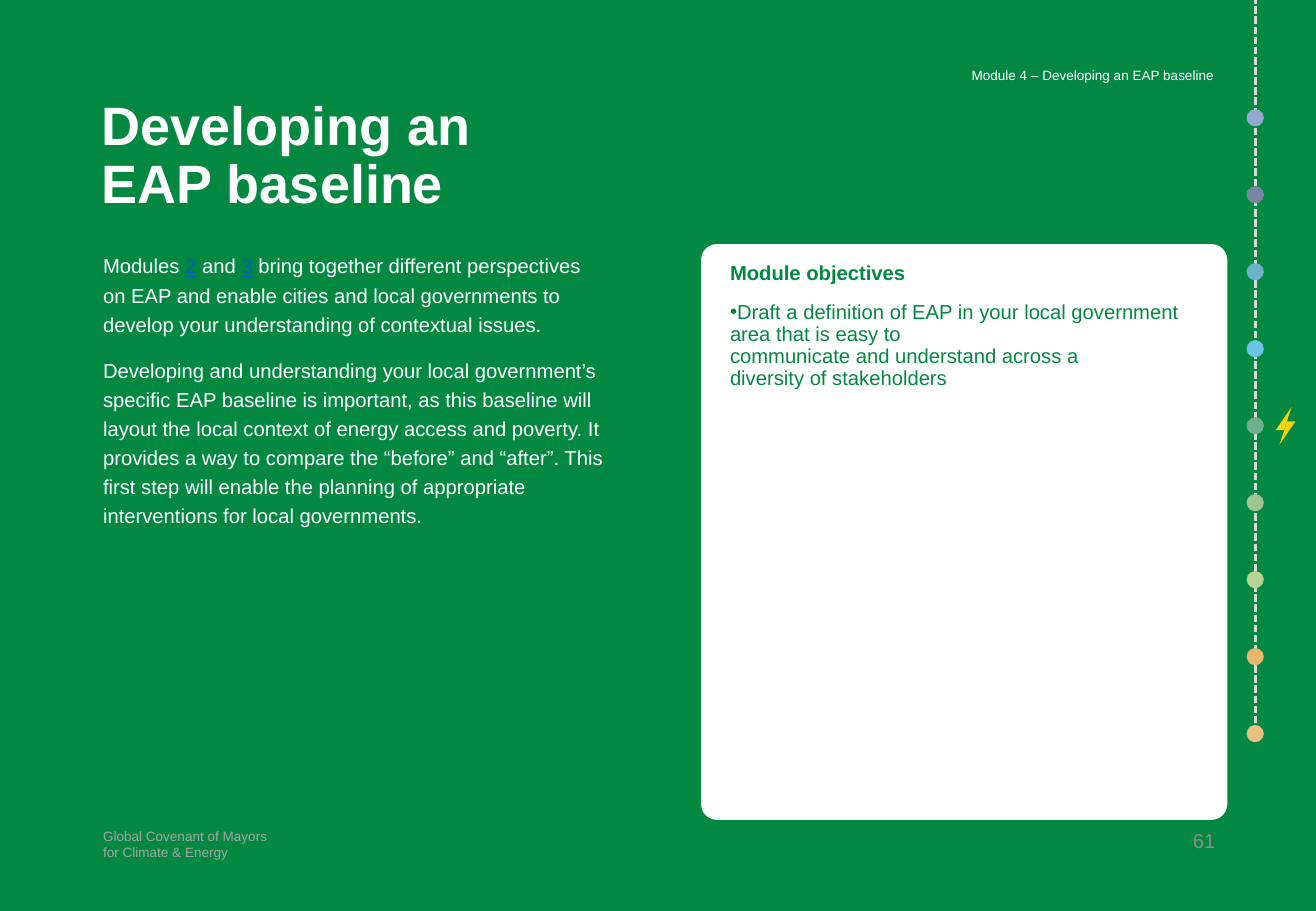
from dataclasses import dataclass
from lxml import etree
from pptx import Presentation, util as u
from pptx.dml import color
from pptx.enum import dml, shapes, text
from pptx.oxml import ns


@dataclass
class Theme:
    face: str = "Arial"
    green: str = "038842"
    white: str = "FFFFFF"
    link: str = "0563C1"
    foot: str = "A6A6A6"
    page: str = "8C8C8C"
    track: str = "D9D9D9"
    bolt: str = "FAD307"
    dots: tuple = ("4C78CE", "1C3567", "008CBE", "00B0F0", "038842",
                   "6AB24D", "92D050", "F19500", "F8A92A")
    small: int = 8
    body: int = 12
    title: int = 32


def rgb(hue):
    return color.RGBColor.from_string(hue)


def apply(item, **vals):
    for key, val in vals.items():
        setattr(item, key, val)


def child(node, tag, **vals):
    return etree.SubElement(node, ns.qn(tag), vals)


class Page:
    def __init__(self, theme, slide):
        self.theme, self.slide = theme, slide
        back = slide.background.fill
        back.solid()
        back.fore_color.rgb = rgb(theme.green)

    def paint(self, item, hue, alpha=None):
        item.shadow.inherit = False
        item.fill.solid()
        item.fill.fore_color.rgb = rgb(hue)
        item.line.fill.background()
        if alpha:
            node = item.element.spPr.find(".//" + ns.qn("a:srgbClr"))
            child(node, "a:alpha", val=str(alpha * 1000))
        return item

    def shape(self, kind, box, hue, alpha=None):
        item = self.slide.shapes.add_shape(kind, *map(u.Inches, box))
        return self.paint(item, hue, alpha)

    def poly(self, points, hue):
        pts = [(u.Inches(x), u.Inches(y)) for x, y in points]
        form = self.slide.shapes.build_freeform(*pts[0])
        form.add_line_segments(pts[1:], close=True)
        self.paint(form.convert_to_shape(), hue)

    def dash(self, start, end, hue, width):
        ends = map(u.Inches, start + end)
        item = self.slide.shapes.add_connector(shapes.MSO_CONNECTOR.STRAIGHT, *ends)
        apply(item.line, width=u.Pt(width), dash_style=dml.MSO_LINE.SQUARE_DOT)
        item.line.color.rgb = rgb(hue)
        child(item.element.spPr, "a:effectLst")

    def box(self, place):
        frame = self.slide.shapes.add_textbox(*map(u.Inches, place)).text_frame
        frame.word_wrap = True
        return frame

    def para(self, frame, runs, size, hue, bold=False, bullet=False, **form):
        first = not frame.paragraphs[0].runs
        par = frame.paragraphs[0] if first else frame.add_paragraph()
        apply(par, **{"alignment": text.PP_ALIGN.LEFT, **form})
        if not first:
            par.space_before = u.Pt(10)
        if bullet:
            props = par._p.get_or_add_pPr()
            indent = u.Inches(0.31)
            apply(props, marL=indent, indent=-indent)
            child(props, "a:buFont", typeface=self.theme.face)
            child(props, "a:buChar", char="•")
        for words, link in runs:
            for row, line in enumerate(words.split("\n")):
                if row:
                    par.add_line_break()
                run = par.add_run()
                run.text = line
                apply(run.font, name=self.theme.face, size=u.Pt(size),
                      bold=bold, underline=link)
                run.font.color.rgb = rgb(self.theme.link if link else hue)


def main():
    deck = Presentation()
    apply(deck, slide_width=u.Inches(10.83), slide_height=u.Inches(7.5))
    look = Theme()
    page = Page(look, deck.slides.add_slide(deck.slide_layouts[6]))
    kind = shapes.MSO_SHAPE
    right = text.PP_ALIGN.RIGHT

    page.para(page.box((0.75, 6.77, 1.83, 0.4)),
              [("Global Covenant of Mayors\nfor Climate & Energy", False)],
              look.small, look.foot)

    page.dash((10.33, 6.04), (10.33, 0), look.track, 1.5)
    step = 5.07 / 8
    for spot, hue in enumerate(look.dots):
        place = (10.26, 0.9 + spot * step, 0.14, 0.14)
        page.shape(kind.OVAL, place, look.track)
        page.shape(kind.OVAL, place, hue, 50)

    half = [(10.57, 3.54), (10.5, 3.54), (10.63, 3.35), (10.58, 3.5)]
    page.poly(half, look.bolt)
    page.poly([(21.16 - x, 7.01 - y) for x, y in half], look.bolt)

    title = page.box((0.74, 0.75, 5.01, 1.08))
    title.vertical_anchor = text.MSO_ANCHOR.MIDDLE
    page.para(title, [("Developing an \nEAP baseline", False)],
              look.title, look.white, bold=True, line_spacing=0.9)

    head = page.box((6.67, 0.5, 3.42, 0.24))
    head.vertical_anchor = text.MSO_ANCHOR.BOTTOM
    page.para(head, [("Module 4 – Developing an EAP baseline", False)],
              look.small, look.white, alignment=right, line_spacing=0.9)

    card = page.shape(kind.ROUNDED_RECTANGLE, (5.77, 2.01, 4.33, 4.74), look.white)
    card.adjustments[0] = 0.03
    goals = card.text_frame
    side, edge = u.Inches(0.2), u.Inches(0.12)
    apply(goals, word_wrap=True, vertical_anchor=text.MSO_ANCHOR.TOP,
          margin_left=side, margin_right=side, margin_top=edge, margin_bottom=edge)
    page.para(goals, [("Module objectives", False)],
              look.body, look.green, bold=True, line_spacing=0.9)
    page.para(goals, [("Draft a definition of EAP in your local government area "
                       "that is easy to \ncommunicate and understand across a "
                       "\ndiversity of stakeholders", False)],
              look.body, look.green, bullet=True, line_spacing=0.9)

    page.para(page.box((9.58, 6.77, 0.52, 0.4)), [("61", False)],
              look.body, look.page, alignment=right)

    intro = page.box((0.75, 2, 4.33, 4.76))
    for runs in (
        [("Modules ", False), ("2", True), (" and ", False), ("3", True),
         (" bring together different perspectives on EAP and enable cities and "
          "local governments to develop your understanding of contextual issues.",
          False)],
        [("Developing and understanding your local government’s specific EAP "
          "baseline is important, as this baseline will layout the local context "
          "of energy access and poverty. It provides a way to compare the “before” "
          "and “after”. This first step will enable the planning of appropriate "
          "interventions for local governments.", False)],
    ):
        page.para(intro, runs, look.body, look.white, line_spacing=1.2)

    deck.save("out.pptx")


if __name__ == "__main__":
    main()
